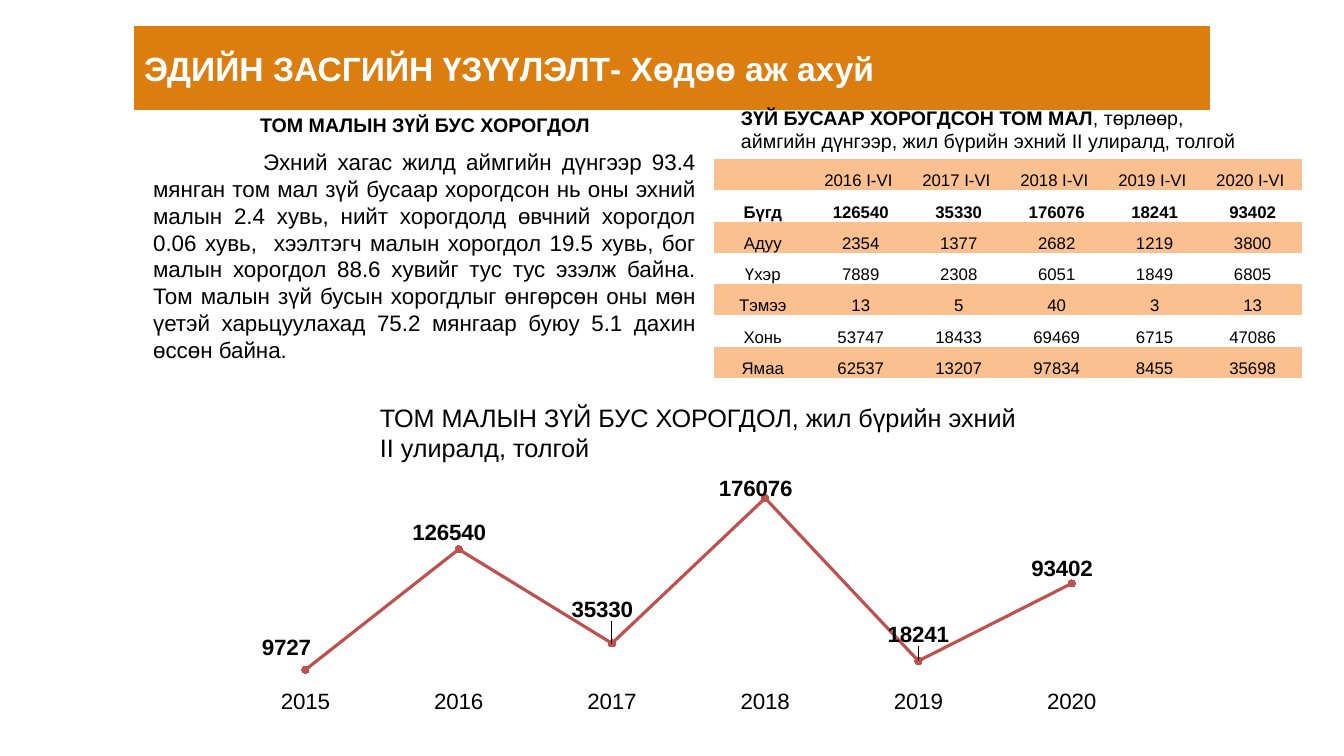
"""Build the slide on unusual livestock losses: heading, text, table and line chart."""
from lxml.etree import SubElement
from pptx import Presentation
from pptx.chart.data import CategoryChartData
from pptx.dml.color import RGBColor
from pptx.enum.chart import XL_CHART_TYPE, XL_LABEL_POSITION, XL_MARKER_STYLE, XL_TICK_LABEL_POSITION, XL_TICK_MARK
from pptx.enum.text import MSO_ANCHOR, PP_ALIGN
from pptx.oxml import parse_xml
from pptx.oxml.ns import nsdecls, qn
from pptx.util import Inches, Pt

COLORS = {"banner": "DC7D0F", "band": "FAC090", "line": "C0504D", "text": "000000", "light": "FFFFFF"}
NO_STYLE = "{2D5ABB26-0587-4C30-8999-92F81FD0307C}"
LOSSES = [
    ["", "2016 I-VI ", "2017 I-VI ", "2018 I-VI ", "2019 I-VI ", "2020 I-VI "],
    ["Бүгд", "126540", "35330", "176076", "18241", "93402"],
    ["Адуу", "2354", "1377", "2682", "1219", "3800"],
    ["Үхэр", "7889", "2308", "6051", "1849", "6805"],
    ["Тэмээ", "13", "5", "40", "3", "13"],
    ["Хонь", "53747", "18433", "69469", "6715", "47086"],
    ["Ямаа", "62537", "13207", "97834", "8455", "35698"],
]
BODY = (
    "Эхний хагас жилд аймгийн дүнгээр 93.4 мянган том мал зүй бусаар хорогдсон нь оны эхний "
    "малын 2.4 хувь, нийт хорогдолд өвчний хорогдол 0.06 хувь,  хээлтэгч малын хорогдол 19.5 хувь, "
    "бог малын хорогдол 88.6 хувийг тус тус эзэлж байна. Том малын зүй бусын хорогдлыг өнгөрсөн "
    "оны мөн үетэй харьцуулахад 75.2 мянгаар буюу 5.1 дахин өссөн байна."
)
TEXTS = [
    ((1.42, 1.42, 5.58, 2.26), 16, [(BODY, False)]),
    ((7.25, 1, 5.25, 0.57), 14, [
        ("ЗҮЙ БУСААР ХОРОГДСОН ТОМ МАЛ", True),
        (", төрлөөр, аймгийн дүнгээр, жил бүрийн эхний II улиралд, толгой", False),
    ]),
    ((3.67, 3.94, 6.67, 0.71), 18, [
        ("ТОМ МАЛЫН ЗҮЙ БУС ХОРОГДОЛ, жил бүрийн эхний II улиралд, толгой", False),
    ]),
]
TABLES = [
    ((2.58, 1.08, 3.42, 0.33), [["ТОМ МАЛЫН ЗҮЙ БУС ХОРОГДОЛ"]], 14, MSO_ANCHOR.MIDDLE, PP_ALIGN.LEFT),
    ((7.08, 1.58, 5.83, 2.17), LOSSES, 12, MSO_ANCHOR.BOTTOM, PP_ALIGN.CENTER),
]
LABEL_SHIFTS = [(-0.02, -0.09), (-0.01, -0.07), (-0.01, -0.14), (-0.01, -0.04), (0, -0.11), (-0.01, -0.06)]


def style(font, size, bold=False, color="text"):
    font.name = "Arial"
    font.size = Pt(size)
    font.bold = bold
    font.color.rgb = RGBColor.from_string(COLORS[color])


def manual_layout(**shares):
    layout = parse_xml(f"<c:layout {nsdecls('c')}/>")
    manual = SubElement(layout, qn("c:manualLayout"))
    for name, value in shares.items():
        SubElement(manual, qn(f"c:{name}")).set("val", str(value))
    return layout


deck = Presentation()
deck.slide_width, deck.slide_height = Inches(13.33), Inches(7.5)
page = deck.slides.add_slide(deck.slide_layouts[5])

title = page.shapes.title
title.left, title.top, title.width, title.height = map(Inches, (1.33, 0.26, 10.67, 0.83))
title.fill.solid()
title.fill.fore_color.rgb = RGBColor.from_string(COLORS["banner"])
title.text_frame.text = "ЭДИЙН ЗАСГИЙН ҮЗҮҮЛЭЛТ- Хөдөө аж ахуй"
title.text_frame.vertical_anchor = MSO_ANCHOR.MIDDLE
title.text_frame.paragraphs[0].alignment = PP_ALIGN.LEFT
style(title.text_frame.paragraphs[0].runs[0].font, 24, True, "light")

for place, size, spans in TEXTS:
    box = page.shapes.add_textbox(*map(Inches, place))
    box.text_frame.word_wrap = True
    para = box.text_frame.paragraphs[0]
    for words, bold in spans:
        span = para.add_run()
        span.text = words
        style(span.font, size, bold)
    if words == BODY:
        para.alignment = PP_ALIGN.JUSTIFY
        para._p.get_or_add_pPr().set("indent", str(Inches(1.09)))

for place, rows, size, anchor, alignment in TABLES:
    table = page.shapes.add_table(len(rows), len(rows[0]), *map(Inches, place)).table
    table._tbl.tblPr.find(qn("a:tableStyleId")).text = NO_STYLE
    table.first_row = table.horz_banding = False
    for row, values in enumerate(rows):
        for column, value in enumerate(values):
            cell = table.cell(row, column)
            cell.margin_left = cell.margin_right = cell.margin_top = cell.margin_bottom = 0
            cell.vertical_anchor = anchor
            cell.text_frame.text = value
            para = cell.text_frame.paragraphs[0]
            para.alignment = alignment
            style(para.font, size)
            for span in para.runs:
                style(span.font, size, len(rows) == 1 or row == 1)
            if rows is LOSSES and row % 2 == 0:
                cell.fill.solid()
                cell.fill.fore_color.rgb = RGBColor.from_string(COLORS["band"])
            else:
                cell.fill.background()

data = CategoryChartData()
data.categories = [str(year) for year in range(2015, 2021)]
data.add_series("Series 1", [9727] + [int(total) for total in LOSSES[1][1:]])
chart = page.shapes.add_chart(
    XL_CHART_TYPE.LINE_MARKERS, *map(Inches, (2.08, 4.65, 9.5, 2.43)), data
).chart
chart.has_legend = chart.has_title = False
chart.font.name, chart.font.size = "Calibri", Pt(10)
chart.font.color.rgb = RGBColor.from_string(COLORS["text"])

years = chart.category_axis
years.major_tick_mark = years.minor_tick_mark = XL_TICK_MARK.NONE
years.tick_label_position = XL_TICK_LABEL_POSITION.LOW
years.format.line.fill.background()
style(years.tick_labels.font, 16)
heads = chart.value_axis
heads.minimum_scale, heads.maximum_scale = 0, 200000
heads.has_major_gridlines = heads.visible = False

plot = chart.plots[0]
plot.vary_by_categories = False
series = plot.series[0]
series.smooth = False
line_color = RGBColor.from_string(COLORS["line"])
series.format.line.width = Pt(2.25)
series.format.line.color.rgb = line_color
series.marker.style, series.marker.size = XL_MARKER_STYLE.CIRCLE, 5
series.marker.format.fill.solid()
series.marker.format.fill.fore_color.rgb = line_color
series.marker.format.line.color.rgb = line_color

labels = series.data_labels
labels.show_value = True
labels.position = XL_LABEL_POSITION.CENTER
style(labels.font, 16, True)
for index, (across, down) in enumerate(LABEL_SHIFTS):
    label = series.points[index].data_label
    style(label.font, 16, True)
    label.position = XL_LABEL_POSITION.CENTER
    element = labels._element.xpath(f"c:dLbl[c:idx/@val={index}]")[0]
    element.insert(1, manual_layout(x=across, y=down))

area = chart._chartSpace.chart.plotArea
for old in area.findall(qn("c:layout")):
    area.remove(old)
area.insert(0, manual_layout(layoutTarget="inner", xMode="edge", yMode="edge", x=0.02, y=0.02, w=0.96, h=0.85))

deck.save("out.pptx")
